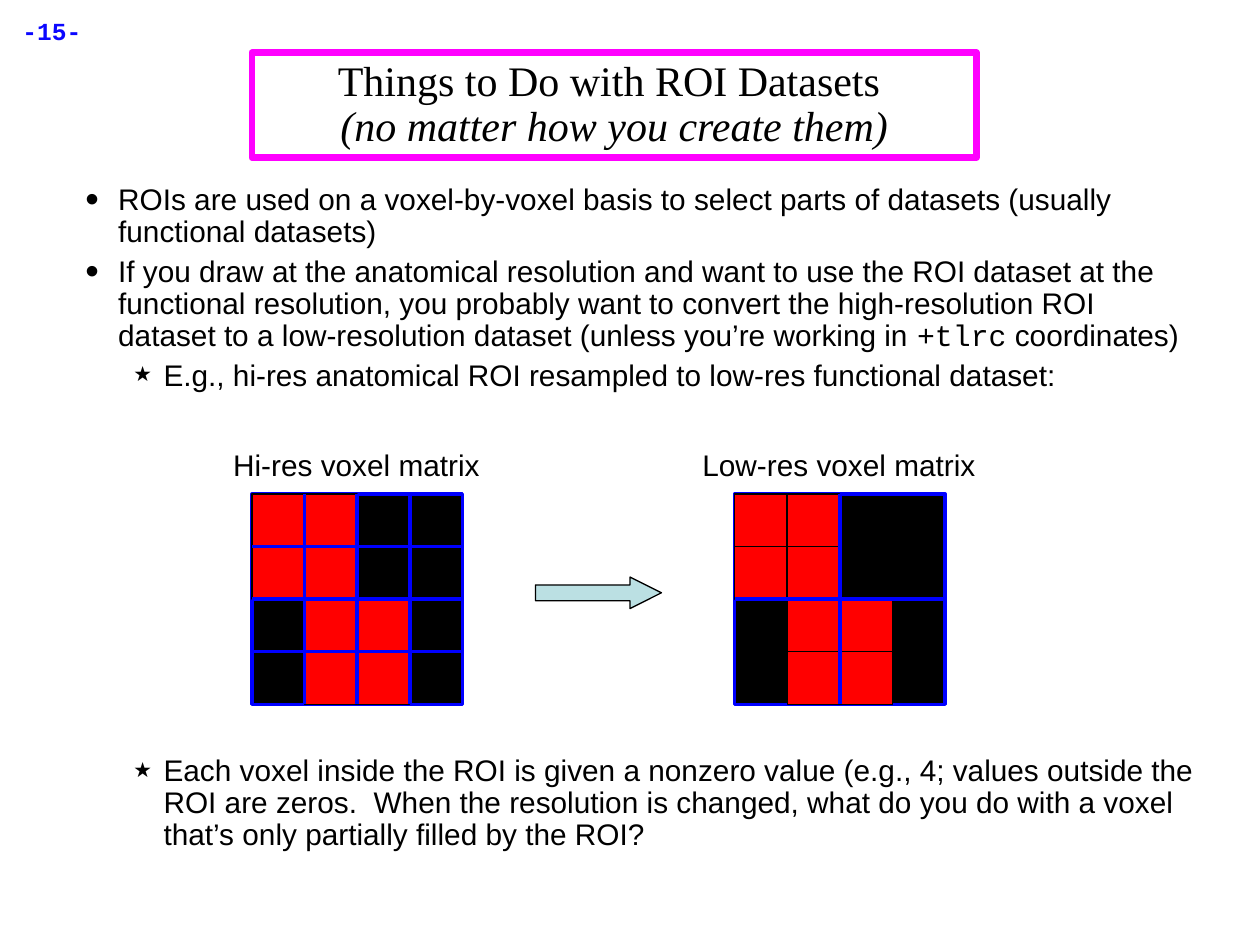
from lxml import etree
from pptx import Presentation
from pptx.dml.color import RGBColor
from pptx.enum.shapes import MSO_CONNECTOR, MSO_SHAPE
from pptx.enum.text import MSO_ANCHOR, PP_ALIGN
from pptx.oxml.ns import qn
from pptx.util import Inches, Pt

RECT, ARROW = MSO_SHAPE.RECTANGLE, MSO_SHAPE.RIGHT_ARROW
STRAIGHT = MSO_CONNECTOR.STRAIGHT
LEFT, CENTER = PP_ALIGN.LEFT, PP_ALIGN.CENTER
MIDDLE = MSO_ANCHOR.MIDDLE

COLORS = {"ink": "000000", "grid": "0000FF", "roi": "FF0000",
          "border": "FF00FF", "arrow": "BBE0E3", "number": "0B07FF"}
SANS, MONO, SERIF = "Arial", "Courier New", "Times New Roman"
BULLETS = [("•", 130, 0.26, 0.26), ("★", 70, 0.62, 0.24)]
GRID_SIDE = 1.67
CELL = GRID_SIDE / 4


def rgb(name):
    return RGBColor.from_string(COLORS[name])


def add_run(p, text, size=17, font=SANS, color="ink", bold=False, italic=False):
    r = p.add_run()
    r.text = text
    r.font.size = Pt(size)
    r.font.name = font
    r.font.bold = bold
    r.font.italic = italic
    r.font.color.rgb = rgb(color)


def add_box(s, kind, x, y, w, h, fill, line, width=0.75):
    sp = s.shapes.add_shape(kind, Inches(x), Inches(y), Inches(w), Inches(h))
    sp.shadow.inherit = False
    if fill:
        sp.fill.solid()
        sp.fill.fore_color.rgb = rgb(fill)
    else:
        sp.fill.background()
    sp.line.color.rgb = rgb(line)
    sp.line.width = Pt(width)
    return sp


def add_line(s, x1, y1, x2, y2):
    cx = s.shapes.add_connector(STRAIGHT, Inches(x1), Inches(y1), Inches(x2), Inches(y2))
    cx.line.color.rgb = rgb("grid")
    cx.line.width = Pt(2)
    etree.SubElement(cx._element.spPr, qn("a:effectLst"))


def add_text(s, x, y, w, h):
    tf = s.shapes.add_textbox(Inches(x), Inches(y), Inches(w), Inches(h)).text_frame
    tf.word_wrap = True
    return tf


def add_label(s, x, y, w, h, text, align=CENTER, **style):
    p = add_text(s, x, y, w, h).paragraphs[0]
    p.alignment = align
    add_run(p, text, **style)


def add_title(s, x, y, w, h):
    tf = add_box(s, RECT, x, y, w, h, None, "border", 4).text_frame
    tf.word_wrap = True
    tf.vertical_anchor = MIDDLE
    p = tf.paragraphs[0]
    p.alignment = CENTER
    p.line_spacing = 0.9
    add_run(p, "Things to Do with ROI Datasets ", 24, SERIF)
    p.add_line_break()
    add_run(p, "(no matter how you create them)", 24, SERIF, italic=True)


def set_bullet(p, level):
    char, size, margin, hang = BULLETS[level]
    p.level = level
    pPr = p._p.get_or_add_pPr()
    pPr.set("marL", str(Inches(margin)))
    pPr.set("indent", str(-Inches(hang)))
    clr = etree.SubElement(pPr, qn("a:buClr"))
    etree.SubElement(clr, qn("a:srgbClr"), val=COLORS["ink"])
    etree.SubElement(pPr, qn("a:buSzPct"), val=str(size * 1000))
    etree.SubElement(pPr, qn("a:buFont"), typeface=SANS)
    etree.SubElement(pPr, qn("a:buChar"), char=char)


def add_bullets(s, x, y, w, h, items):
    tf = add_text(s, x, y, w, h)
    for i, (level, runs) in enumerate(items):
        p = tf.add_paragraph() if i else tf.paragraphs[0]
        p.line_spacing = 0.9
        p.space_before = Pt(4.2)
        set_bullet(p, level)
        for text, font in runs:
            add_run(p, text, font=font)


def add_voxel_matrix(s, x, y, title, divisions):
    add_label(s, x - 0.42, y - 0.42, 2.5, 0.39, title)
    add_box(s, RECT, x, y, GRID_SIDE, GRID_SIDE, "ink", "grid", 2)
    for row in range(4):
        first = row // 2
        for col in (first, first + 1):
            add_box(s, RECT, x + col * CELL, y + row * CELL, CELL, CELL, "roi", "ink")
    for i in range(1, divisions):
        d = i * GRID_SIDE / divisions
        add_line(s, x + d, y, x + d, y + GRID_SIDE)
        add_line(s, x, y + d, x + GRID_SIDE, y + d)


def add_resample_arrow(s, x, y, w, h):
    sp = add_box(s, ARROW, x, y, w, h, "arrow", "ink")
    sp.adjustments[0] = 0.5
    sp.adjustments[1] = 1.0


def main():
    prs = Presentation()
    prs.slide_width, prs.slide_height = Inches(10), Inches(7.5)
    s = prs.slides.add_slide(prs.slide_layouts[6])
    add_label(s, 0.08, 0.08, 0.92, 0.83, "-15-", LEFT,
              size=14, font=MONO, color="number", bold=True)
    add_title(s, 2, 0.42, 5.75, 0.83)
    add_bullets(s, 0.58, 1.42, 9, 1.8, [
        (0, [("ROIs are used on a voxel-by-voxel basis to select parts of datasets "
              "(usually functional datasets)", SANS)]),
        (0, [("If you draw at the anatomical resolution and want to use the ROI dataset "
              "at the functional resolution, you probably want to convert the "
              "high-resolution ROI dataset to a low-resolution dataset (unless you’re "
              "working in ", SANS), ("+tlrc", MONO), (" coordinates)", SANS)]),
        (1, [("E.g., hi-res anatomical ROI resampled to low-res functional dataset:", SANS)]),
    ])
    add_voxel_matrix(s, 2, 3.92, "Hi-res voxel matrix", 4)
    add_resample_arrow(s, 4.25, 4.58, 1, 0.25)
    add_voxel_matrix(s, 5.83, 3.92, "Low-res voxel matrix", 2)
    add_bullets(s, 0.58, 5.95, 9, 0.9, [
        (1, [("Each voxel inside the ROI is given a nonzero value (e.g., 4; values outside "
              "the ROI are zeros.  When the resolution is changed, what do you do with a "
              "voxel that’s only partially filled by the ROI?", SANS)]),
    ])
    prs.save("out.pptx")


if __name__ == "__main__":
    main()
